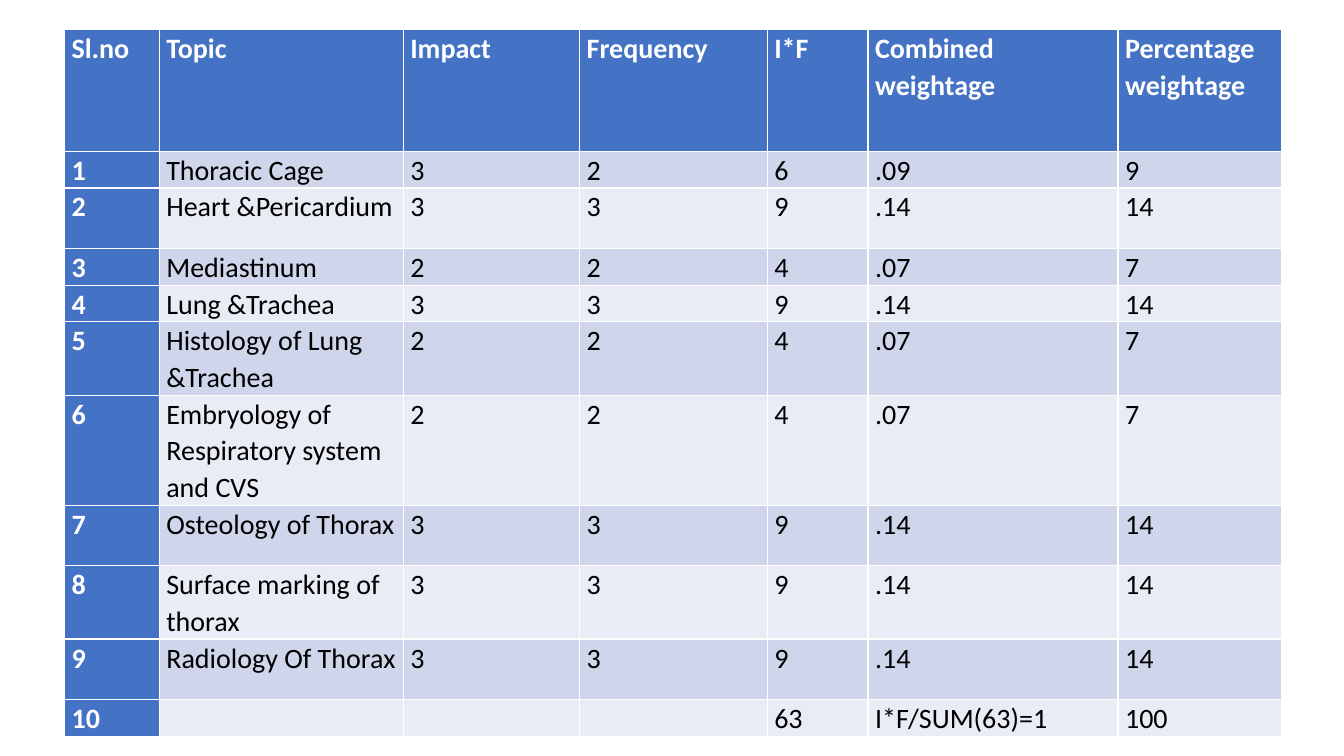
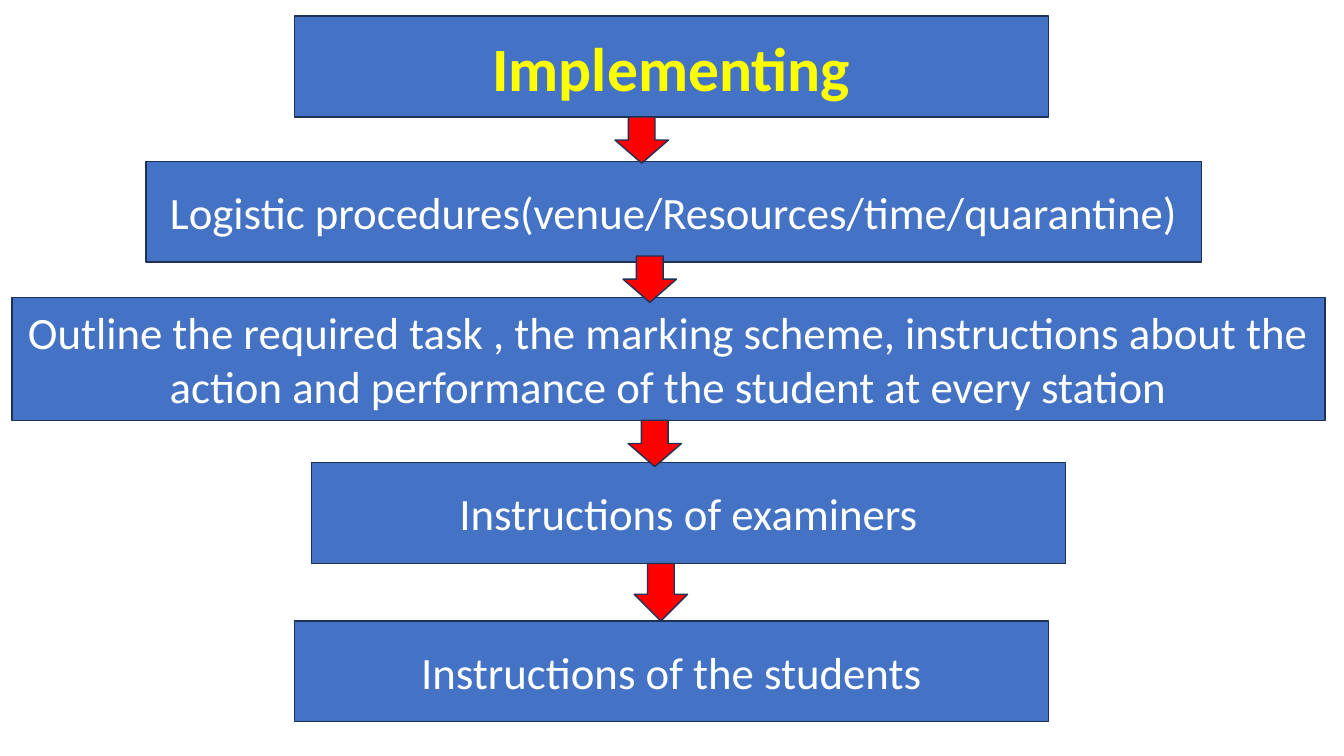
from pptx import Presentation
from pptx.dml.color import RGBColor
from pptx.enum.shapes import MSO_SHAPE
from pptx.enum.text import MSO_ANCHOR, PP_ALIGN
from pptx.util import Inches, Pt

RECTANGLE = MSO_SHAPE.RECTANGLE
DOWN_ARROW = MSO_SHAPE.DOWN_ARROW
MIDDLE = MSO_ANCHOR.MIDDLE
CENTER = PP_ALIGN.CENTER

FONT = "Calibri"
COLORS = {
    "blue": "4472C4",
    "outline": "1E3256",
    "dark_band": "CFD5EA",
    "light_band": "E9EBF5",
    "red": "FF0000",
    "yellow": "FFFF00",
    "white": "FFFFFF",
    "black": "000000",
}


def style_text(paragraph, size, color, bold=False):
    font = paragraph.font
    font.name = FONT
    font.size = Pt(size)
    font.bold = bold
    font.color.rgb = RGBColor.from_string(COLORS[color])


def add_block(slide, kind, left, top, width, height, fill):
    block = slide.shapes.add_shape(
        kind, Inches(left), Inches(top), Inches(width), Inches(height))
    block.shadow.inherit = False
    block.fill.solid()
    block.fill.fore_color.rgb = RGBColor.from_string(COLORS[fill])
    block.line.color.rgb = RGBColor.from_string(COLORS["outline"])
    block.line.width = Pt(1)
    return block


prs = Presentation()
prs.slide_width = Inches(13.33)
prs.slide_height = Inches(7.5)
blank = prs.slide_layouts[6]

weightage_slide = prs.slides.add_slide(blank)
weightage_rows = [
    ("Sl.no", "Topic", "Impact", "Frequency", "I*F",
     "Combined weightage", "Percentage weightage"),
    ("1", "Thoracic Cage", "3", "2", "6", ".09", "9"),
    ("2", "Heart &Pericardium", "3", "3", "9", ".14", "14"),
    ("3", "Mediastinum", "2", "2", "4", ".07", "7"),
    ("4", "Lung &Trachea", "3", "3", "9", ".14", "14"),
    ("5", "Histology of Lung &Trachea", "2", "2", "4", ".07", "7"),
    ("6", "Embryology of Respiratory system and CVS", "2", "2", "4", ".07", "7"),
    ("7", "Osteology of Thorax", "3", "3", "9", ".14", "14"),
    ("8", "Surface marking of thorax", "3", "3", "9", ".14", "14"),
    ("9", "Radiology Of Thorax", "3", "3", "9", ".14", "14"),
    ("10", "", "", "", "63", "I*F/SUM(63)=1", "100"),
]
column_widths = [0.94, 2.42, 1.75, 1.86, 1, 2.48, 1.62]
row_heights = [1.21, 0.29, 0.6, 0.29, 0.29, 0.6, 0.91, 0.6, 0.6, 0.6, 0.29]

weightage = weightage_slide.shapes.add_table(
    len(row_heights), len(column_widths), Inches(0.64), Inches(0.29),
    Inches(sum(column_widths)), Inches(sum(row_heights))).table
weightage.first_col = True
for column, width in zip(weightage.columns, column_widths):
    column.width = Inches(width)
for row, height in zip(weightage.rows, row_heights):
    row.height = Inches(height)

for r, values in enumerate(weightage_rows):
    for c, value in enumerate(values):
        heading = r == 0 or c == 0
        band = "dark_band" if r % 2 else "light_band"
        cell = weightage.cell(r, c)
        cell.fill.solid()
        cell.fill.fore_color.rgb = RGBColor.from_string(
            COLORS["blue" if heading else band])
        cell.margin_left = cell.margin_right = Inches(0.07)
        cell.margin_top = cell.margin_bottom = 0
        cell.text = value
        paragraph = cell.text_frame.paragraphs[0]
        paragraph.line_spacing = 1.07
        paragraph.space_after = Pt(8)
        style_text(paragraph, 20, "white" if heading else "black", heading)

implementing_slide = prs.slides.add_slide(blank)
steps = [
    ("Implementing", 2.92, 0.16, 7.48, 1),
    ("Logistic procedures(venue/Resources/time/quarantine)", 1.45, 1.6, 10.47, 1),
    ("Outline the required task , the marking scheme, instructions about the "
     "action and performance of the student at every station",
     0.12, 2.95, 13.02, 1.22),
    ("Instructions of examiners", 3.09, 4.59, 7.48, 1),
    ("Instructions of the students", 2.92, 6.16, 7.48, 1),
]
for index, (wording, left, top, width, height) in enumerate(steps):
    step = add_block(implementing_slide, RECTANGLE, left, top, width, height, "blue")
    step.text_frame.word_wrap = True
    step.text_frame.vertical_anchor = MIDDLE
    step.text_frame.text = wording
    paragraph = step.text_frame.paragraphs[0]
    paragraph.alignment = CENTER
    if index == 0:
        style_text(paragraph, 44, "yellow", True)
    else:
        style_text(paragraph, 32, "white")

arrows = [(6.1, 1.16, 0.46), (6.18, 2.54, 0.46), (6.23, 4.17, 0.46), (6.29, 5.59, 0.57)]
for left, top, height in arrows:
    add_block(implementing_slide, DOWN_ARROW, left, top, 0.53, height, "red")

prs.save("out.pptx")
